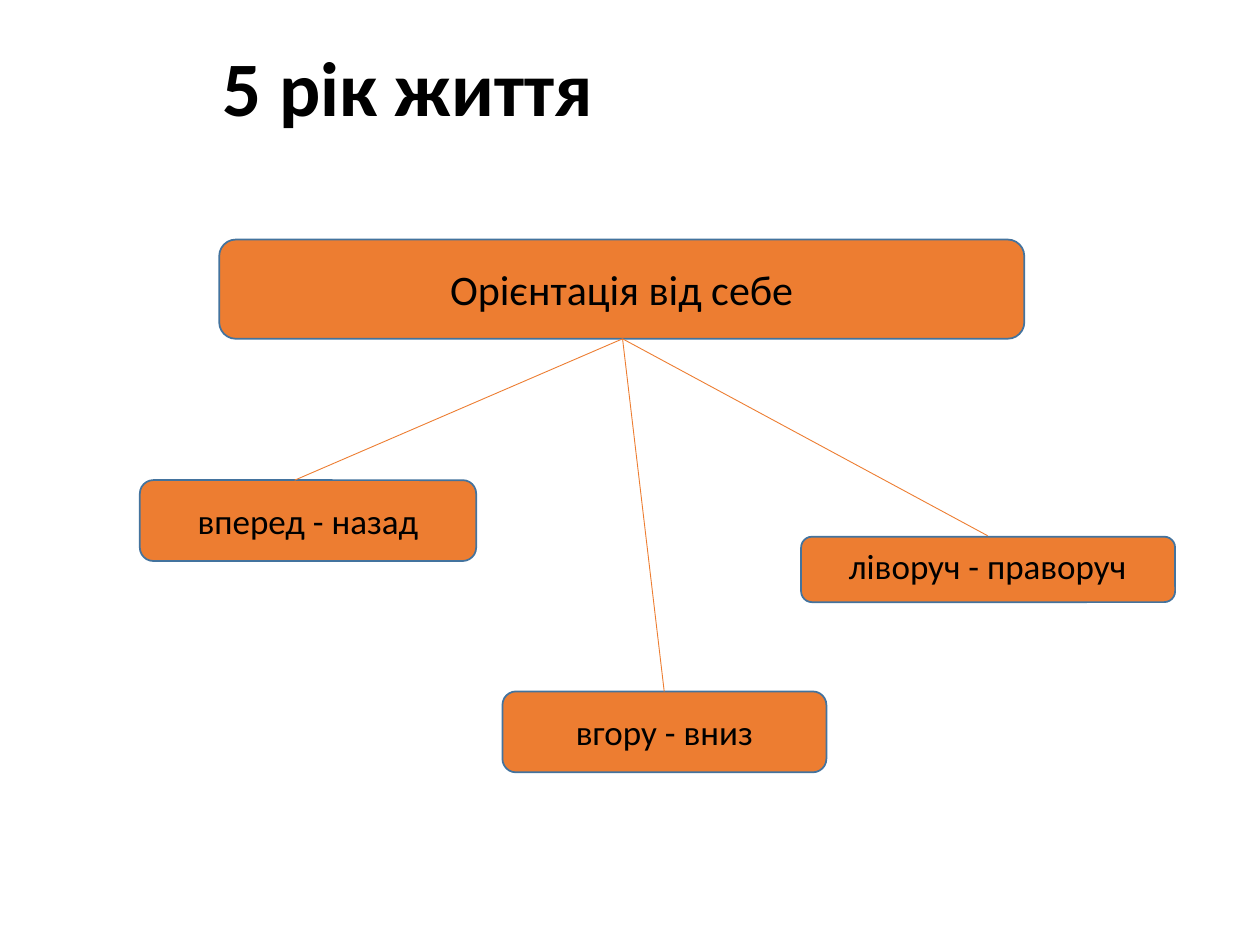
from lxml import etree
from pptx import Presentation
from pptx import util as u
from pptx.dml.color import RGBColor
from pptx.enum import shapes as sh, text as tx
from pptx.oxml.ns import qn


def paint(fmt, tone):
    if hasattr(fmt, "solid"):
        fmt.solid()
        fmt = fmt.fore_color
    fmt.rgb = RGBColor.from_string(tone)


def write(shape, words, size, bold=False, anchor=tx.MSO_ANCHOR.MIDDLE):
    frame = shape.text_frame
    frame.word_wrap = True
    frame.vertical_anchor = anchor
    para = frame.paragraphs[0]
    para.text = words
    para.alignment = tx.PP_ALIGN.CENTER
    style = {"name": "Calibri", "size": u.Pt(size), "bold": bold}
    for key, val in style.items():
        setattr(para.font, key, val)
    paint(para.font.color, "000000")
    return para


deck = Presentation()
deck.slide_width, deck.slide_height = u.Cm(25.4), u.Cm(19.05)
slide = deck.slides.add_slide(deck.slide_layouts[6])
parts = slide.shapes

# Title
title = parts.add_textbox(*map(u.Cm, (-2.72, 0, 21.89, 3.68)))
write(title, "5 рік життя", 44, bold=True).line_spacing = 0.9

# Topic box and its three branches
boxes = [
    ("Орієнтація від себе", 24, (4.42, 4.83, 16.23, 2)),
    ("вперед - назад", 20, (2.82, 9.68, 6.78, 1.63)),
    ("", 20, (16.15, 10.82, 7.54, 1.32)),
    ("вгору - вниз", 20, (10.13, 13.94, 6.53, 1.63)),
]
for words, size, place in boxes:
    box = parts.add_shape(sh.MSO_SHAPE.ROUNDED_RECTANGLE, *map(u.Cm, place))
    box.shadow.inherit = False
    paint(box.fill, "ED7D31")
    paint(box.line.color, "43739E")
    box.line.width = u.Pt(1)
    if words:
        write(box, words, size)

# Label over the right branch
label = parts.add_textbox(*map(u.Cm, (16.66, 10.85, 6.5, 1.12)))
write(label, "ліворуч - праворуч", 20, anchor=tx.MSO_ANCHOR.TOP)

# Lines from the topic to the branches
for end in [(5.94, 9.68), (19.91, 10.8), (13.39, 13.94)]:
    line = parts.add_connector(sh.MSO_CONNECTOR.STRAIGHT,
                               *map(u.Cm, (12.55, 6.83, *end)))
    paint(line.line.color, "ED7D31")
    line.line.width = u.Pt(0.5)
    etree.SubElement(line._element.spPr, qn("a:effectLst"))

deck.save("out.pptx")
